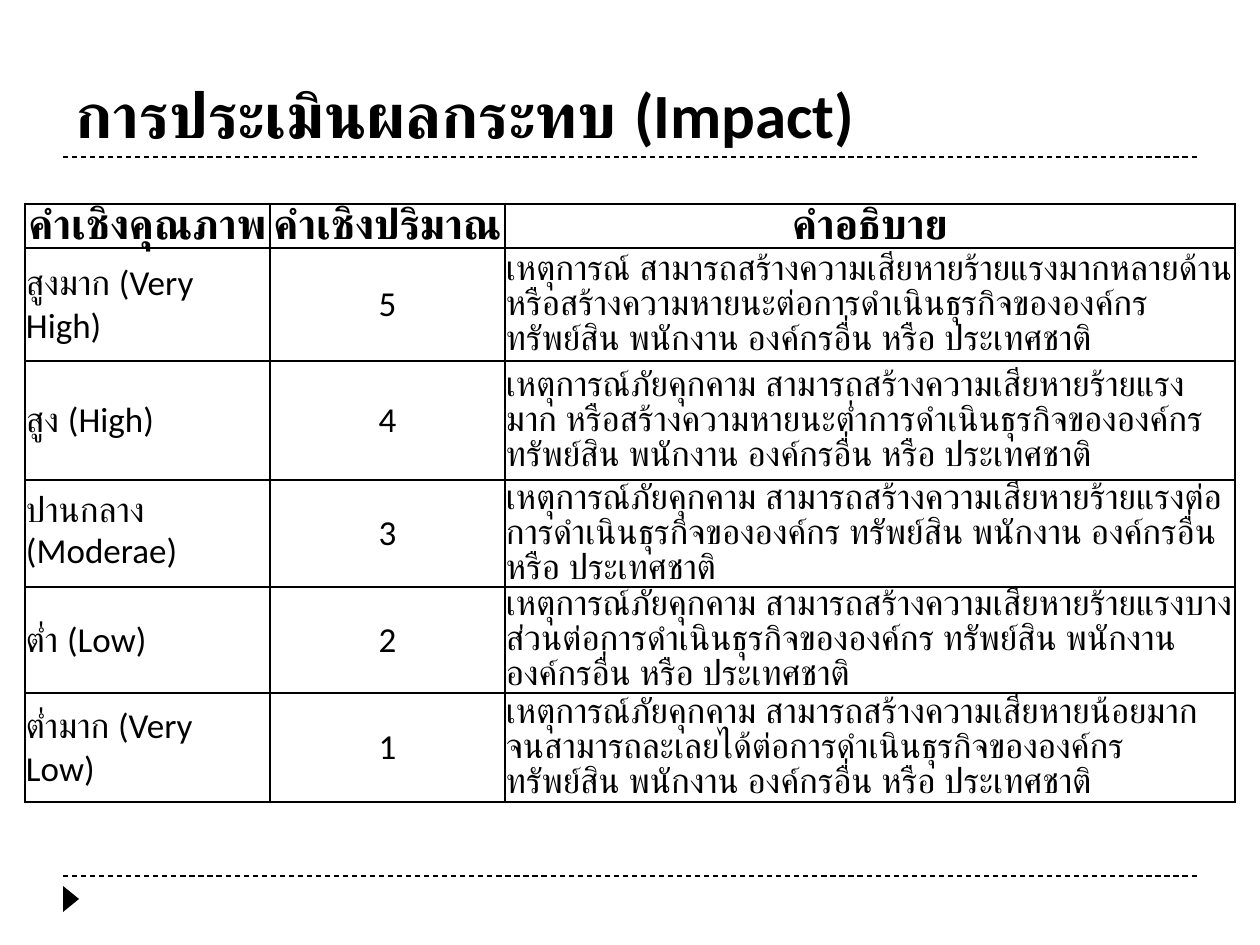
import pptx
import pptx.util
import pptx.dml.color
import pptx.enum.dml
import pptx.enum.shapes
import pptx.enum.text
import pptx.oxml
import pptx.oxml.ns
from lxml import etree

# Content
TITLE = "การประเมินผลกระทบ (Impact)"
HEADINGS = ("คำเชิงคุณภาพ", "คำเชิงปริมาณ", "คำอธิบาย")
LEVELS = [
    ("สูงมาก (Very High)", "5",
     "เหตุการณ์ สามารถสร้างความเสียหายร้ายแรงมากหลายด้าน หรือสร้างความหายนะต่อการดำเนินธุรกิจขององค์กร "
     "ทรัพย์สิน พนักงาน องค์กรอื่น หรือ ประเทศชาติ"),
    ("สูง (High)", "4",
     "เหตุการณ์ภัยคุกคาม สามารถสร้างความเสียหายร้ายแรงมาก หรือสร้างความหายนะต่ำการดำเนินธุรกิจขององค์กร "
     "ทรัพย์สิน พนักงาน องค์กรอื่น หรือ ประเทศชาติ"),
    ("ปานกลาง (Moderae)", "3",
     "เหตุการณ์ภัยคุกคาม สามารถสร้างความเสียหายร้ายแรงต่อการดำเนินธุรกิจขององค์กร "
     "ทรัพย์สิน พนักงาน องค์กรอื่น หรือ ประเทศชาติ"),
    ("ต่ำ (Low)", "2",
     "เหตุการณ์ภัยคุกคาม สามารถสร้างความเสียหายร้ายแรงบางส่วนต่อการดำเนินธุรกิจขององค์กร "
     "ทรัพย์สิน พนักงาน องค์กรอื่น หรือ ประเทศชาติ"),
    ("ต่ำมาก (Very Low)", "1",
     "เหตุการณ์ภัยคุกคาม สามารถสร้างความเสียหายน้อยมาก จนสามารถละเลยได้ต่อการดำเนินธุรกิจขององค์กร "
     "ทรัพย์สิน พนักงาน องค์กรอื่น หรือ ประเทศชาติ"),
]

# Layout in px
SLIDE_W, SLIDE_H = 1260, 945
MARGIN = 63
RULES_Y = (876, 157)
TABLE_LEFT, TABLE_TOP = 25, 204
COLUMN_WIDTHS = (245, 235, 730)
ROW_HEIGHTS = (44, 113, 119, 107, 106, 109)

FONT = "Calibri"
BLACK = pptx.dml.color.RGBColor(0x00, 0x00, 0x00)
LEFT = pptx.enum.text.PP_ALIGN.LEFT
CENTER = pptx.enum.text.PP_ALIGN.CENTER


def px(length):
    return pptx.util.Emu(round(length * 914400 / 126))


def style(paragraph, size, bold, align):
    paragraph.alignment = align
    paragraph.font.name = FONT
    paragraph.font.size = pptx.util.Pt(size)
    paragraph.font.bold = bold
    paragraph.font.color.rgb = BLACK


def add_borders(cell):
    properties = cell._tc.get_or_add_tcPr()
    for position, side in enumerate(("lnL", "lnR", "lnT", "lnB")):
        border = pptx.oxml.parse_xml(
            f'<a:{side} {pptx.oxml.ns.nsdecls("a")} w="12700"><a:solidFill>'
            f'<a:srgbClr val="{BLACK}"/></a:solidFill></a:{side}>')
        properties.insert(position, border)


presentation = pptx.Presentation()
presentation.slide_width, presentation.slide_height = px(SLIDE_W), px(SLIDE_H)
slide = presentation.slides.add_slide(presentation.slide_layouts[6])
shapes = slide.shapes

# Dashed rules
for y in RULES_Y:
    rule = shapes.add_connector(pptx.enum.shapes.MSO_CONNECTOR.STRAIGHT,
                                px(MARGIN), px(y), px(SLIDE_W - MARGIN), px(y))
    rule.line.color.rgb = BLACK
    rule.line.width = pptx.util.Pt(0.75)
    rule.line.dash_style = pptx.enum.dml.MSO_LINE.DASH
    etree.SubElement(rule._element.spPr, pptx.oxml.ns.qn("a:effectLst"))

# Footer marker
marker = shapes.add_shape(pptx.enum.shapes.MSO_SHAPE.ISOSCELES_TRIANGLE,
                          px(58), px(891), px(26), px(16))
marker.rotation = 90
marker.shadow.inherit = False
marker.fill.solid()
marker.fill.fore_color.rgb = BLACK
marker.line.fill.background()

# Title
title = shapes.add_textbox(px(MARGIN), px(21), px(SLIDE_W - 2 * MARGIN), px(136))
title.text_frame.word_wrap = True
title.text_frame.vertical_anchor = pptx.enum.text.MSO_ANCHOR.BOTTOM
title.text_frame.text = TITLE
style(title.text_frame.paragraphs[0], 36, True, LEFT)

# Impact table
rows = [HEADINGS, *LEVELS]
impact = shapes.add_table(len(rows), len(HEADINGS), px(TABLE_LEFT), px(TABLE_TOP),
                          px(sum(COLUMN_WIDTHS)), px(sum(ROW_HEIGHTS))).table
for column, width in zip(impact.columns, COLUMN_WIDTHS):
    column.width = px(width)
for r, (texts, height) in enumerate(zip(rows, ROW_HEIGHTS)):
    impact.rows[r].height = px(height)
    heading = r == 0
    size = 24 if heading else 20
    for c, text in enumerate(texts):
        cell = impact.cell(r, c)
        cell.text = text
        cell.margin_left = cell.margin_top = cell.margin_right = px(1)
        cell.margin_bottom = 0
        cell.vertical_anchor = pptx.enum.text.MSO_ANCHOR.MIDDLE
        cell.fill.background()
        add_borders(cell)
        paragraph = cell.text_frame.paragraphs[0]
        style(paragraph, size, heading, CENTER if heading or c == 1 else LEFT)
        # Thai-only text is set solid, which keeps the rows compact
        if heading or c == 2:
            paragraph.line_spacing = pptx.util.Pt(size)

presentation.save("out.pptx")
